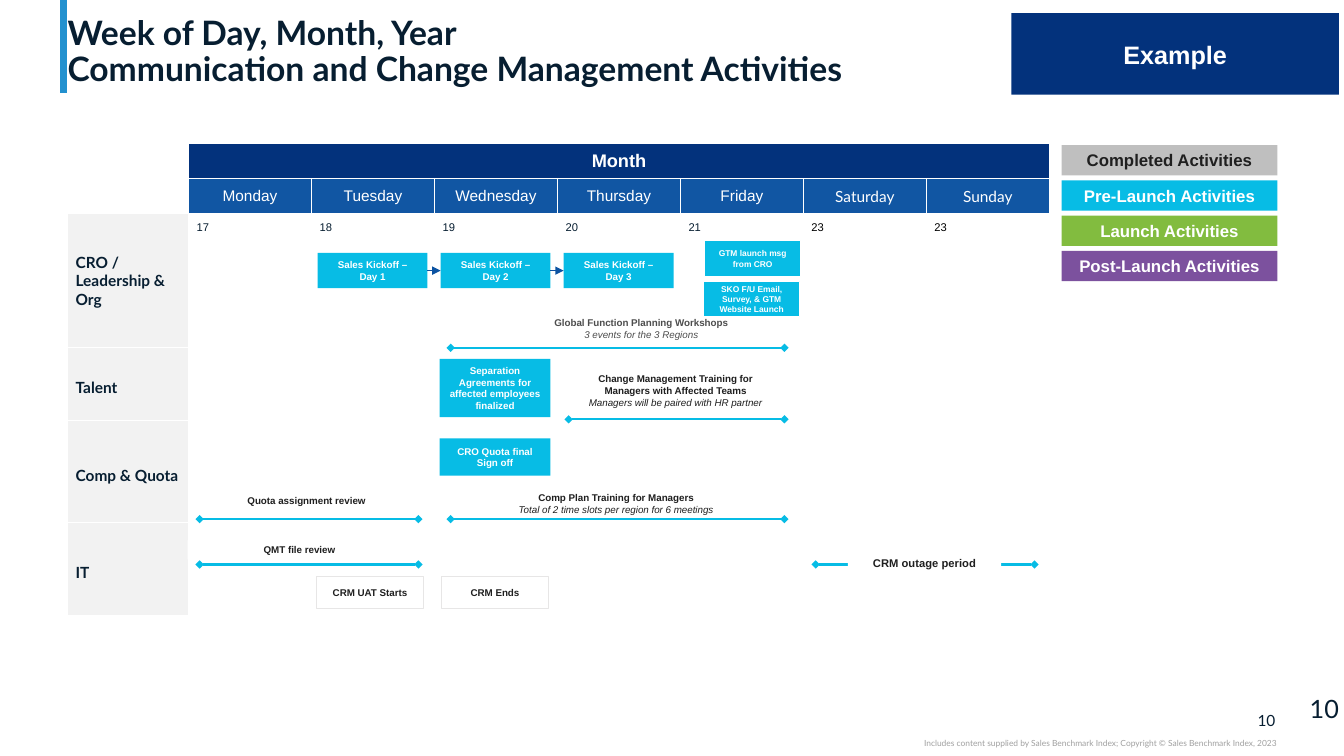
from dataclasses import dataclass

from lxml import etree
from pptx import Presentation
from pptx import util as u
from pptx.dml.color import RGBColor
from pptx.enum import shapes, text
from pptx.oxml.ns import qn

PX = 9144  # EMU per px, 100 px to the inch
LEFT, CENTER, RIGHT = text.PP_ALIGN.LEFT, text.PP_ALIGN.CENTER, text.PP_ALIGN.RIGHT
TOP, MIDDLE, BOTTOM = text.MSO_ANCHOR.TOP, text.MSO_ANCHOR.MIDDLE, text.MSO_ANCHOR.BOTTOM


@dataclass(frozen=True)
class Theme:
    head: str = "Lato"
    body: str = "Arial"
    ink: str = "071E31"
    dark: str = "1F1F1F"
    soft: str = "4D4D4D"
    black: str = "000000"
    white: str = "FFFFFF"
    navy: str = "03327C"
    blue: str = "1156A3"
    arrow: str = "0C53A2"
    accent: str = "2391CF"
    cyan: str = "07BCE5"
    green: str = "82BC3F"
    purple: str = "7C519E"
    silver: str = "BFBFBF"
    band: str = "F2F2F2"
    frame: str = "E7E6E6"
    faint: str = "A0A0A0"
    title: int = 24
    big: int = 18
    month: int = 13
    legend: int = 12
    label: int = 11
    day: int = 8
    task: int = 7
    small: int = 6


T = Theme()


def px(*values):
    return [u.Emu(v * PX) for v in values]


def rgb(color):
    return RGBColor.from_string(color)


def style(p, size, color, font=T.body, bold=True, italic=False, align=CENTER):
    p.alignment = align
    for r in p.runs:
        f = r.font
        f.size, f.name, f.bold, f.italic = u.Pt(size), font, bold, italic
        f.color.rgb = rgb(color)


def inset(frame, left, top, right, bottom):
    (frame.margin_left, frame.margin_top,
     frame.margin_right, frame.margin_bottom) = px(left, top, right, bottom)


def add_box(slide, box, words, fill, color, size=T.task, line=None, side=10, subline=False):
    sp = slide.shapes.add_shape(shapes.MSO_SHAPE.RECTANGLE, *px(*box))
    sp.shadow.inherit = False
    sp.fill.solid()
    sp.fill.fore_color.rgb = rgb(fill)
    if line:
        sp.line.color.rgb = rgb(line)
        sp.line.width = u.Pt(0.75)
    else:
        sp.line.fill.background()
    tf = sp.text_frame
    tf.word_wrap, tf.vertical_anchor = True, MIDDLE
    inset(tf, side, 5, side, 5)
    tf.text = words
    for i, p in enumerate(tf.paragraphs):
        second = subline and i > 0
        style(p, size, color, bold=not second, italic=second)
    return sp


def add_line(slide, x1, y1, x2, y2, color, width, head=None, tail=None):
    ln = slide.shapes.add_connector(shapes.MSO_CONNECTOR.STRAIGHT, *px(x1, y1, x2, y2))
    ln.line.color.rgb = rgb(color)
    ln.line.width = u.Pt(width)
    for tag, kind in (("a:headEnd", head), ("a:tailEnd", tail)):
        if kind:
            etree.SubElement(ln.line._get_or_add_ln(), qn(tag), type=kind)
    etree.SubElement(ln._element.spPr, qn("a:effectLst"))
    return ln


def add_text(slide, box, words, size, color, align, anchor):
    tf = slide.shapes.add_textbox(*px(*box)).text_frame
    tf.word_wrap, tf.vertical_anchor = True, anchor
    inset(tf, 0, 0, 0, 0)
    tf.text = words
    style(tf.paragraphs[0], size, color, T.head, False, align=align)


def header(slide, x, y, w, h):
    add_line(slide, x - 4, 0, x - 4, y + h + 4, T.accent, 5)
    sp = slide.shapes.title
    sp.left, sp.top, sp.width, sp.height = px(x, y, w, h)
    tf = sp.text_frame
    tf.word_wrap, tf.auto_size, tf.vertical_anchor = True, text.MSO_AUTO_SIZE.NONE, BOTTOM
    inset(tf, 0, 0, 0, 0)
    tf.text = "Week of Day, Month, Year\vCommunication and Change Management Activities"
    p = tf.paragraphs[0]
    p.line_spacing = 0.9
    style(p, T.title, T.ink, T.head, align=LEFT)
    add_box(slide, (x + 936, y + 9, 325, 81), "Example", T.navy, T.white, T.big)


def fill_cell(cell, words, fill, margins, anchor, **look):
    cell.text = words
    cell.vertical_anchor = anchor
    inset(cell, *margins)
    if words:
        style(cell.text_frame.paragraphs[0], **look)


def calendar_grid(slide, x, y):
    widths, heights = [120] + [122] * 7, [35, 35, 24, 109, 72, 101, 93]
    shape = slide.shapes.add_table(len(heights), len(widths),
                                   *px(x, y, sum(widths), sum(heights)))
    table = shape.table
    table.first_row = table.horz_banding = False
    for col, w in zip(table.columns, px(*widths)):
        col.width = w
    for row, h in zip(table.rows, px(*heights)):
        row.height = h
    table.cell(0, 1).merge(table.cell(0, 7))
    table.cell(2, 0).merge(table.cell(3, 0))

    # Headings, dates and row labels
    even, low = (8, 4, 8, 4), (8, 8, 8, 0)
    fill_cell(table.cell(0, 1), "Month", T.navy, even, MIDDLE, size=T.month, color=T.white)
    days = ["Monday", "Tuesday", "Wednesday", "Thursday", "Friday", "Saturday", "Sunday"]
    dates = ["17", "18", "19", "20", "21", "23", "23"]
    for c, (day, date) in enumerate(zip(days, dates), 1):
        weekend = c > 5
        fill_cell(table.cell(1, c), day, T.blue, even, MIDDLE, size=T.label, color=T.white,
                  font=T.head if weekend else T.body, bold=False)
        fill_cell(table.cell(2, c), date, T.white, low, TOP, size=T.day, bold=False,
                  color=T.black if weekend else T.ink, align=LEFT)
    labels = {2: "CRO / Leadership & Org", 4: "Talent", 5: "Comp & Quota", 6: "IT"}
    for r, label in labels.items():
        fill_cell(table.cell(r, 0), label, T.band, even if r == 2 else low, MIDDLE,
                  size=T.label, color=T.ink, font=T.head, align=LEFT)

    # White rules and fills
    for r in range(len(heights)):
        for c in range(len(widths)):
            cell = table.cell(r, c)
            for tag in ("a:lnL", "a:lnR", "a:lnT", "a:lnB"):
                ln = etree.SubElement(cell._tc.get_or_add_tcPr(), qn(tag), w="9525")
                solid = etree.SubElement(ln, qn("a:solidFill"))
                etree.SubElement(solid, qn("a:srgbClr"), val=T.white)
            band = T.band if c == 0 and r > 1 else T.white
            fill = {0: T.navy, 1: T.blue}.get(r, band) if c else band
            cell.fill.solid()
            cell.fill.fore_color.rgb = rgb(fill)
            if not cell.text:
                p = cell.text_frame.paragraphs[0]._p
                etree.SubElement(p, qn("a:endParaRPr"), sz=str(T.day * 100))


def calendar(slide, x, y):
    calendar_grid(slide, x, y)

    # Multi-day spans: start, end, height
    for x1, x2, at in [(380, 711, 203), (497, 711, 274), (380, 711, 373),
                       (131, 348, 373), (131, 348, 418), (742, 959, 418)]:
        add_line(slide, x + x1, y + at, x + x2, y + at, T.cyan, 1.5, "diamond", "diamond")

    # Span captions
    for (dx, dy, w, h), words, color, size in [
        ((462, 167, 214, 34), "Global Function Planning Workshops\n3 events for the 3 Regions",
         T.soft, T.task),
        ((495, 225, 216, 41), "Change Management Training for Managers with Affected Teams\n"
         "Managers will be paired with HR partner", T.dark, T.task),
        ((387, 348, 314, 19), "Comp Plan Training for Managers\n"
         "Total of 2 time slots per region for 6 meetings", T.dark, T.task),
        ((126, 345, 222, 19), "Quota assignment review", T.dark, T.task),
        ((119, 394, 222, 19), "QMT file review", T.dark, T.task),
        ((774, 407, 152, 20), "CRM outage period", T.dark, T.day),
    ]:
        add_box(slide, (x + dx, y + dy, w, h), words, T.white, color, size, subline=True)

    # Single-day tasks
    for (dx, dy, w, h), words, fill, color, size, line in [
        ((632, 97, 95, 35), "GTM launch msg from CRO", T.cyan, T.white, T.small, T.white),
        ((631, 137, 95, 35), "SKO F/U Email, Survey, & GTM Website Launch",
         T.cyan, T.white, T.small, T.white),
        ((369, 214, 110, 58), "Separation Agreements for affected employees finalized",
         T.cyan, T.white, T.task, None),
        ((369, 293, 110, 37), "CRO Quota final Sign off", T.cyan, T.white, T.task, None),
        ((247, 430, 106, 32), "CRM UAT Starts", T.white, T.dark, T.task, T.frame),
        ((371, 430, 106, 32), "CRM Ends", T.white, T.dark, T.task, T.frame),
    ]:
        add_box(slide, (x + dx, y + dy, w, h), words, fill, color, size, line)

    # Kickoff days, joined by arrows
    kickoffs = [add_box(slide, (x + 248 + 122 * i, y + 109, 109, 35),
                        f"Sales Kickoff –\nDay {i + 1}", T.cyan, T.white) for i in range(3)]
    for before, after in zip(kickoffs, kickoffs[1:]):
        ln = add_line(slide, 0, 0, 0, 0, T.arrow, 0.75, tail="triangle")
        ln.begin_connect(before, 3)
        ln.end_connect(after, 1)


def legend(slide, x, y, w, h):
    for i, (stage, fill, color) in enumerate([
            ("Completed", T.silver, T.dark), ("Pre-Launch", T.cyan, T.white),
            ("Launch", T.green, T.white), ("Post-Launch", T.purple, T.white)]):
        add_box(slide, (x, y + 35 * i, w, h), f"{stage} Activities", fill, color,
                T.legend, side=3)


def footer(slide, x, y, w):
    right = x + w
    add_text(slide, (right - 34, y, 33, 19), "10", T.label, T.ink, RIGHT, MIDDLE)
    add_text(slide, (x, y + 27, w, 10), "Includes content supplied by Sales Benchmark Index; "
             "Copyright © Sales Benchmark Index, 2023", T.small, T.faint, RIGHT, TOP)
    add_text(slide, (right + 33, y - 12, 34, 20), "10", T.big, T.ink, LEFT, MIDDLE)


def main():
    prs = Presentation()
    prs.slide_width, prs.slide_height = px(1333, 750)
    slide = prs.slides.add_slide(prs.slide_layouts[5])
    header(slide, 67, 4, 1199, 84)
    calendar(slide, 67, 142)
    legend(slide, 1053, 144, 214, 30)
    footer(slide, 750, 705, 516)
    prs.save("out.pptx")


if __name__ == "__main__":
    main()
